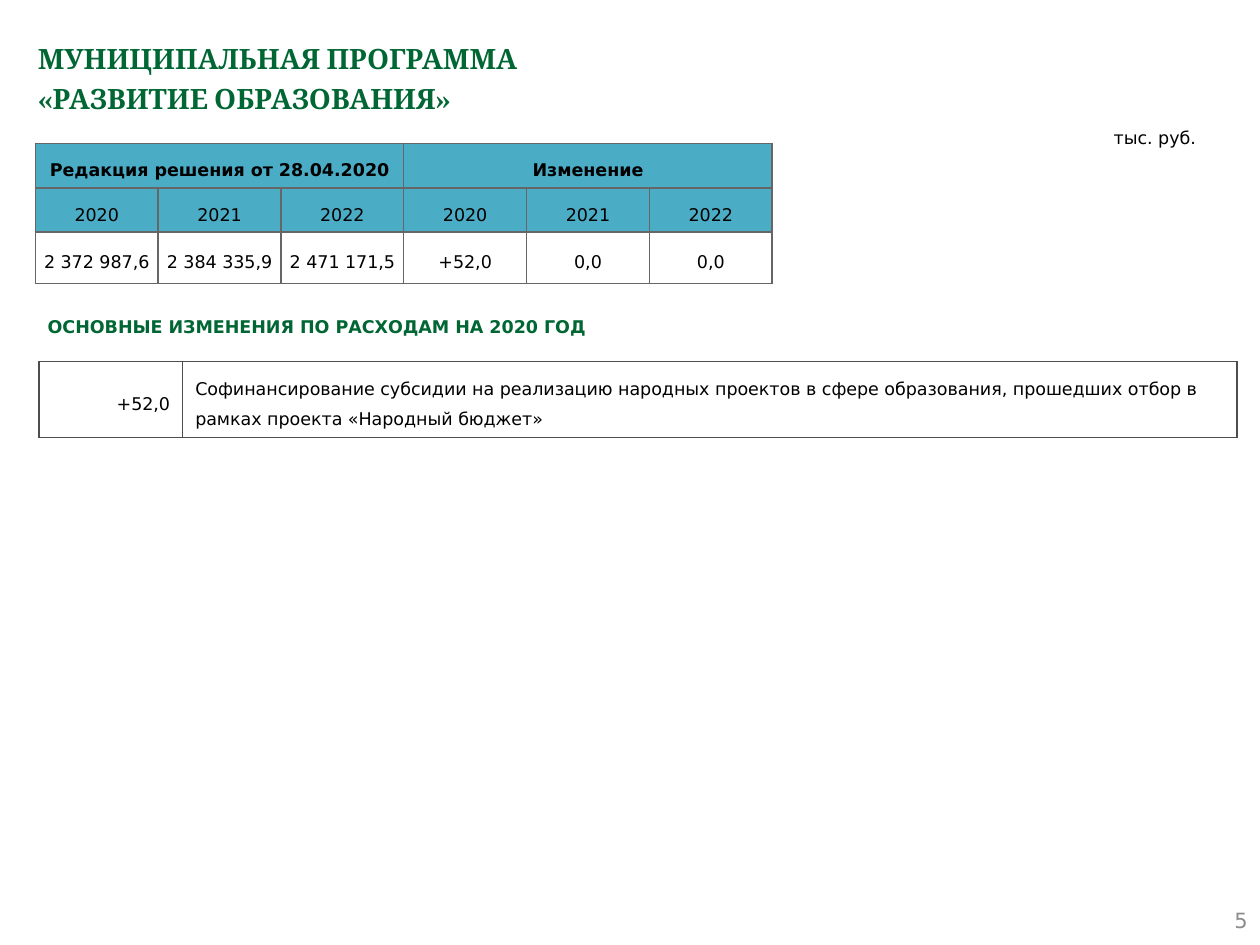
from dataclasses import dataclass
from lxml import etree
from pptx import Presentation
from pptx.dml.color import RGBColor
from pptx.enum.shapes import MSO_SHAPE
from pptx.enum.text import MSO_ANCHOR, MSO_AUTO_SIZE, PP_ALIGN
from pptx.oxml.ns import qn
from pptx.util import Inches, Pt

LEFT, MID, RIGHT = PP_ALIGN.LEFT, PP_ALIGN.CENTER, PP_ALIGN.RIGHT
TOP, CENTRE = MSO_ANCHOR.TOP, MSO_ANCHOR.MIDDLE
FIXED = MSO_AUTO_SIZE.NONE
PLATE = MSO_SHAPE.PENTAGON


@dataclass(frozen=True)
class Theme:
    head: str = "Cambria"
    body: str = "DejaVu Sans"
    green: str = "006633"
    black: str = "000000"
    grey: str = "8C8C8C"
    blue: str = "4BACC6"
    line: str = "666666"
    dark: str = "4D4D4D"
    title: int = 16
    number: int = 12
    text: int = 10


theme = Theme()


def write(frame, lines, size=theme.text, color=theme.black, font=theme.body,
          bold=False, align=LEFT, anchor=CENTRE, space=1.0, after=0):
    frame.word_wrap = True
    frame.vertical_anchor = anchor
    para = frame.paragraphs[0]
    para.alignment = align
    para.line_spacing = space
    para.space_after = Pt(after)
    for i, line in enumerate(lines):
        if i:
            para.add_line_break()
        run = para.add_run()
        run.text = line
        run.font.size = Pt(size)
        run.font.name = font
        run.font.bold = bold
        run.font.color.rgb = RGBColor.from_string(color)


def add_grid(left, top, cols, rows, line):
    grid = slide.shapes.add_table(
        len(rows), len(cols), Inches(left), Inches(top),
        Inches(sum(cols)), Inches(sum(rows))).table
    grid.first_row = grid.horz_banding = False
    for col, width in zip(grid.columns, cols):
        col.width = Inches(width)
    for row, height in zip(grid.rows, rows):
        row.height = Inches(height)
    for cell in grid.iter_cells():
        props = cell._tc.get_or_add_tcPr()
        for side in ("a:lnL", "a:lnR", "a:lnT", "a:lnB"):
            edge = etree.SubElement(props, qn(side), w=str(Pt(1)))
            fill = etree.SubElement(edge, qn("a:solidFill"))
            etree.SubElement(fill, qn("a:srgbClr"), val=line)
        cell.fill.background()
    return grid


deck = Presentation()
deck.slide_width, deck.slide_height = Inches(10), Inches(7.5)
slide = deck.slides.add_slide(deck.slide_layouts[5])

# Title
title = slide.shapes.title
title.left, title.top = Inches(0.2), Inches(0.2)
title.width, title.height = Inches(9.61), Inches(0.79)
title.text_frame.auto_size = FIXED
write(title.text_frame, ["МУНИЦИПАЛЬНАЯ ПРОГРАММА", "«РАЗВИТИЕ ОБРАЗОВАНИЯ»"],
      theme.title, theme.green, theme.head, bold=True, space=1.2)

# Page number and unit
number = slide.shapes.add_textbox(Inches(7.67), Inches(7.1), Inches(2.33), Inches(0.4))
write(number.text_frame, ["5"], theme.number, theme.grey, align=RIGHT)
unit = slide.shapes.add_textbox(Inches(8.74), Inches(0.93), Inches(1.01), Inches(0.3))
write(unit.text_frame, ["тыс. руб."], anchor=TOP, space=1.2)

# Section heading
plate = slide.shapes.add_shape(PLATE, Inches(0.28), Inches(2.38), Inches(5.32), Inches(0.43))
plate.adjustments[0] = 0
plate.shadow.inherit = False
plate.fill.background()
plate.line.fill.background()
write(plate.text_frame, ["ОСНОВНЫЕ ИЗМЕНЕНИЯ ПО РАСХОДАМ НА 2020 ГОД"],
      color=theme.green, bold=True)

# List of changes
changes = add_grid(0.31, 2.87, [1.14, 8.37], [0.58], theme.dark)
write(changes.cell(0, 0).text_frame, ["+52,0"], align=RIGHT, space=1.5, after=10)
write(changes.cell(0, 1).text_frame,
      ["Софинансирование субсидии на реализацию народных проектов в сфере "
       "образования, прошедших отбор в рамках проекта «Народный бюджет»"],
      space=1.5, after=10)
for cell in changes.iter_cells():
    cell.vertical_anchor = CENTRE

# Budget by year
years = ["2020", "2021", "2022"]
data = [
    ["Редакция решения от 28.04.2020", "", "", "Изменение", "", ""],
    years * 2,
    ["2 372 987,6", "2 384 335,9", "2 471 171,5", "+52,0", "0,0", "0,0"],
]
budget = add_grid(0.28, 1.14, [0.975] * 6, [0.35, 0.35, 0.41], theme.line)
for r, row in enumerate(data):
    for c, value in enumerate(row):
        cell = budget.cell(r, c)
        cell.margin_left = cell.margin_right = Inches(0.05)
        cell.margin_top = cell.margin_bottom = Inches(0.05)
        cell.vertical_anchor = CENTRE
        if r < 2:
            cell.fill.solid()
            cell.fill.fore_color.rgb = RGBColor.from_string(theme.blue)
        if value:
            write(cell.text_frame, [value], bold=r == 0, align=MID, space=1.5)
for c in (0, 3):
    budget.cell(0, c).merge(budget.cell(0, c + 2))

deck.save("out.pptx")
